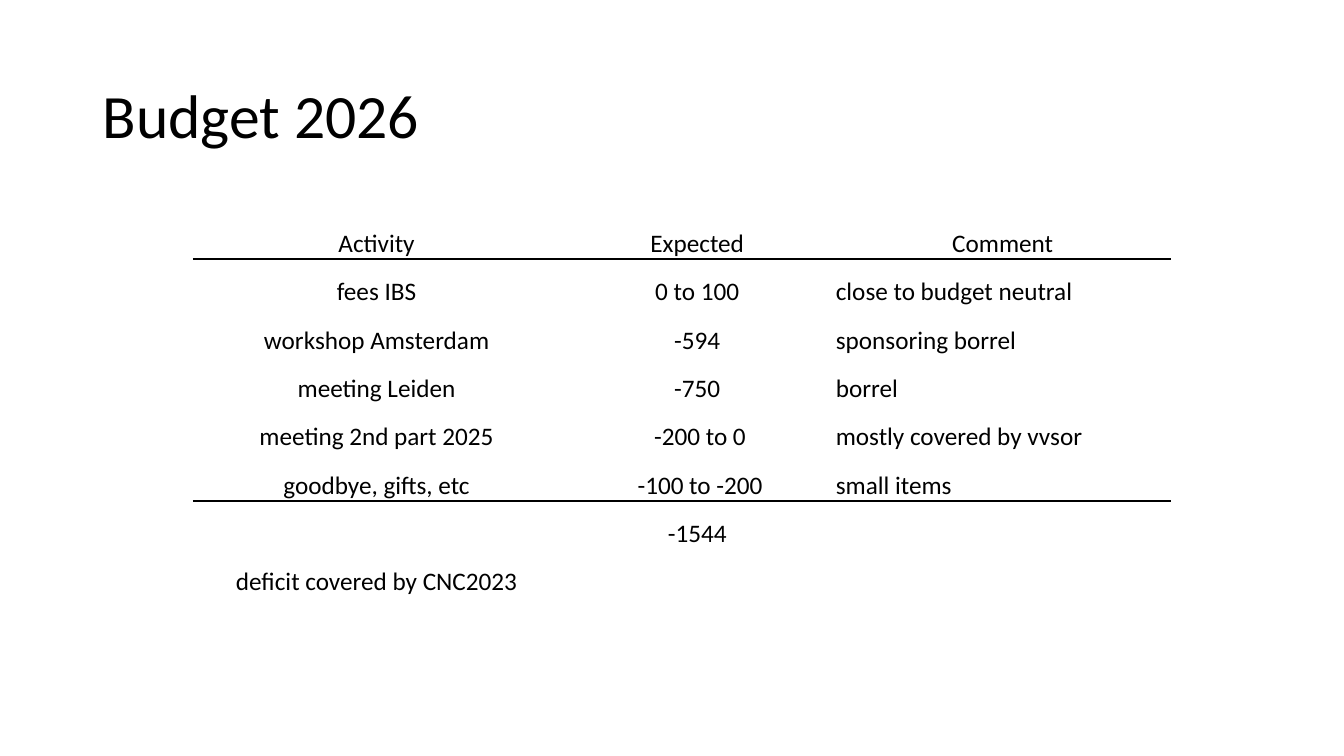
from dataclasses import dataclass

from lxml.etree import SubElement
from pptx import Presentation
from pptx.dml.color import RGBColor
from pptx.enum.text import MSO_ANCHOR, PP_ALIGN
from pptx.oxml.ns import qn
from pptx.util import Inches, Pt


@dataclass(frozen=True)
class Theme:
    font: str = "Calibri"
    ink: str = "000000"
    paper: str = "FFFFFF"
    title_size: int = 44
    body_size: int = 18
    rule_width: int = 1


THEME = Theme()
WIDTH, HEIGHT = Inches(13.33), Inches(7.5)
COLUMN_WIDTHS = [3.63, 2.73, 3.33]
ROW_HEIGHT = 0.48
RULED_ROWS = (0, 5)
BUDGET = [
    ("Activity", "Expected", "Comment"),
    ("fees IBS", "0 to 100", "close to budget neutral"),
    ("workshop Amsterdam", "-594", "sponsoring borrel"),
    ("meeting Leiden", "-750", "borrel"),
    ("meeting 2nd part 2025", " -200 to 0", "mostly covered by vvsor"),
    ("goodbye, gifts, etc", " -100 to -200", "small items"),
    ("", "-1544", ""),
    ("deficit covered by CNC2023", "", ""),
]


def style(p, size, align=PP_ALIGN.LEFT):
    p.alignment = align
    p.font.name = THEME.font
    p.font.size = Pt(size)
    p.font.color.rgb = RGBColor.from_string(THEME.ink)


def add_title(s, text):
    sp = s.shapes.add_textbox(
        Inches(0.92), Inches(0.45), Inches(11.5), Inches(1.45)
    )
    tf = sp.text_frame
    tf.word_wrap = True
    tf.vertical_anchor = MSO_ANCHOR.MIDDLE
    p = tf.paragraphs[0]
    p.text = text
    p.line_spacing = 0.9
    style(p, THEME.title_size)


def set_borders(cell, top, bottom):
    tcPr = cell._tc.get_or_add_tcPr()
    sides = {"L": THEME.paper, "R": THEME.paper, "T": top, "B": bottom}
    for side, color in sides.items():
        ln = SubElement(tcPr, qn(f"a:ln{side}"), w=str(Pt(THEME.rule_width)))
        fill = SubElement(ln, qn("a:solidFill"))
        SubElement(fill, qn("a:srgbClr"), val=color)


def rule_color(row):
    return THEME.ink if row in RULED_ROWS else THEME.paper


def fill_cell(cell, text, row, align):
    set_borders(cell, rule_color(row - 1), rule_color(row))
    cell.fill.solid()
    cell.fill.fore_color.rgb = RGBColor.from_string(THEME.paper)
    cell.vertical_anchor = MSO_ANCHOR.BOTTOM
    cell.margin_left = cell.margin_right = cell.margin_top = Inches(0.01)
    cell.margin_bottom = 0
    p = cell.text_frame.paragraphs[0]
    p.text = text
    style(p, THEME.body_size, align)


def add_budget_table(s):
    table = s.shapes.add_table(
        len(BUDGET), len(COLUMN_WIDTHS), Inches(1.92), Inches(2.09),
        Inches(sum(COLUMN_WIDTHS)), Inches(ROW_HEIGHT * len(BUDGET)),
    ).table
    table.horz_banding = False
    table.first_row = False
    for column, width in zip(table.columns, COLUMN_WIDTHS):
        column.width = Inches(width)
    for row, texts in enumerate(BUDGET):
        for col, text in enumerate(texts):
            is_comment = row > 0 and col == 2
            align = PP_ALIGN.LEFT if is_comment else PP_ALIGN.CENTER
            fill_cell(table.cell(row, col), text, row, align)


def main():
    prs = Presentation()
    prs.slide_width, prs.slide_height = WIDTH, HEIGHT
    s = prs.slides.add_slide(prs.slide_layouts[6])
    add_title(s, "Budget 2026")
    add_budget_table(s)
    prs.save("out.pptx")


if __name__ == "__main__":
    main()
